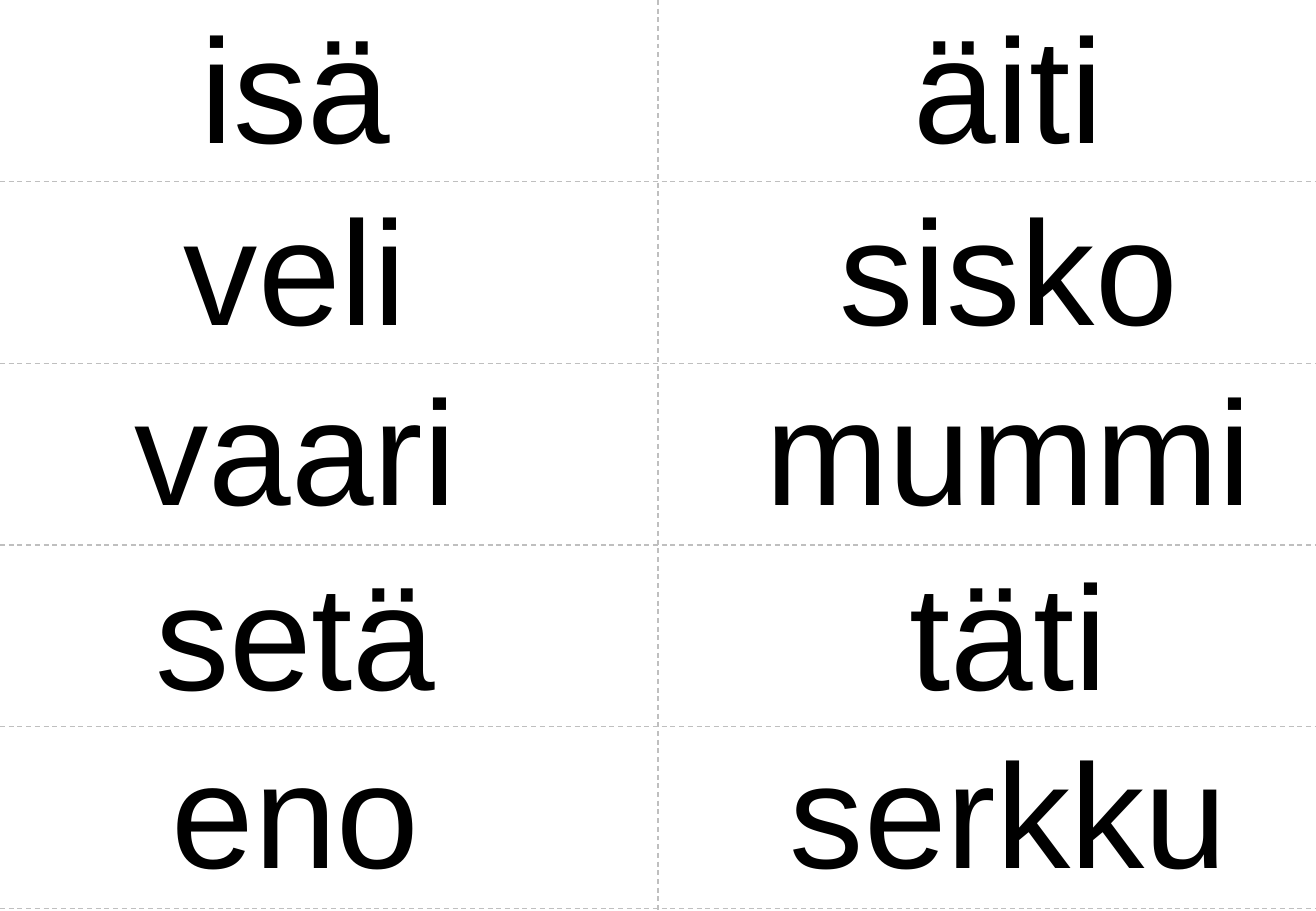
"""Build a sheet of Finnish family word cards with dashed cutting lines."""
from lxml import etree
from pptx import Presentation
from pptx.dml.color import RGBColor
from pptx.enum.dml import MSO_LINE
from pptx.enum.shapes import MSO_CONNECTOR
from pptx.enum.text import MSO_AUTO_SIZE, PP_ALIGN
from pptx.oxml.ns import qn
from pptx.util import Inches, Pt

STRAIGHT = MSO_CONNECTOR.STRAIGHT
DASH = MSO_LINE.DASH
CENTER = PP_ALIGN.CENTER
FIT_SHAPE = MSO_AUTO_SIZE.SHAPE_TO_FIT_TEXT

CARD_ROWS = [
    (-0.09, ("isä", 1.68), ("äiti", 1.68)),
    (1.41, ("veli", 1.95), ("sisko", 2.9)),
    (2.89, ("vaari", 2.76), ("mummi", 4.12)),
    (4.41, ("setä", 2.42), ("täti", 1.74)),
    (5.88, ("eno", 2.15), ("serkku", 3.71)),
]
COLUMN_CENTERS = (2.43, 8.3)
PAGE_WIDTH, PAGE_HEIGHT = 10.83, 7.5
LAST_CUT = 7.48
WORD_HEIGHT = 1.48
INSET = 0.05
THEME = {
    "font": "Arial",
    "word_size": 88,
    "word_color": RGBColor(0, 0, 0),
    "cut_color": RGBColor(0xBF, 0xBF, 0xBF),
    "cut_width": 0.75,
}


def add_cut(page, left, top, right, bottom):
    cut = page.shapes.add_connector(
        STRAIGHT, Inches(left), Inches(top), Inches(right), Inches(bottom))
    cut.line.color.rgb = THEME["cut_color"]
    cut.line.width = Pt(THEME["cut_width"])
    cut.line.dash_style = DASH
    etree.SubElement(cut.element.spPr, qn("a:effectLst"))


def add_word(page, text, *, center, top, width, size, color):
    box = page.shapes.add_textbox(
        Inches(center - width / 2), Inches(top), Inches(width), Inches(WORD_HEIGHT))
    frame = box.text_frame
    frame.word_wrap = False
    frame.auto_size = FIT_SHAPE
    frame.margin_left = frame.margin_right = Inches(INSET)
    frame.margin_top = frame.margin_bottom = Inches(INSET)
    para = frame.paragraphs[0]
    para.alignment = CENTER
    span = para.add_run()
    span.text = text
    span.font.name = THEME["font"]
    span.font.size = Pt(size)
    span.font.color.rgb = color


def main():
    deck = Presentation()
    deck.slide_width = Inches(PAGE_WIDTH)
    deck.slide_height = Inches(PAGE_HEIGHT)
    page = deck.slides.add_slide(deck.slide_layouts[6])

    middle = PAGE_WIDTH / 2
    add_cut(page, middle, 0, middle, PAGE_HEIGHT)
    row_height = LAST_CUT / len(CARD_ROWS)
    for row in range(1, len(CARD_ROWS) + 1):
        add_cut(page, 0, row * row_height, PAGE_WIDTH, row * row_height)

    for column, center in enumerate(COLUMN_CENTERS):
        for top, *cards in CARD_ROWS:
            word, width = cards[column]
            add_word(page, word, center=center, top=top, width=width,
                     size=THEME["word_size"], color=THEME["word_color"])

    deck.save("out.pptx")


if __name__ == "__main__":
    main()
